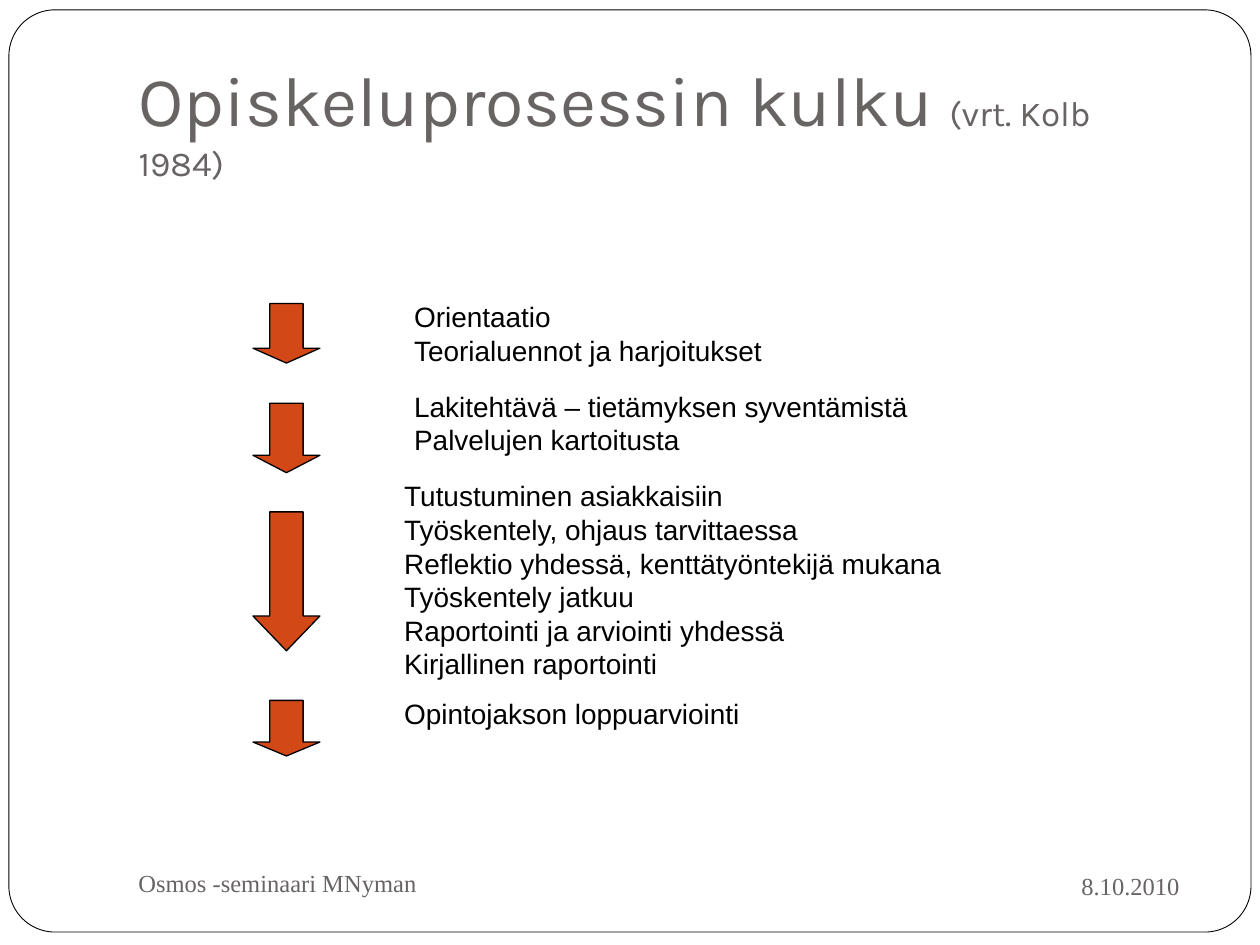
from pptx import Presentation
from pptx.dml.color import RGBColor
from pptx.enum.shapes import MSO_SHAPE
from pptx.enum.text import MSO_ANCHOR, MSO_AUTO_SIZE, PP_ALIGN
from pptx.util import Cm, Pt

ROUND, DOWN = MSO_SHAPE.ROUNDED_RECTANGLE, MSO_SHAPE.DOWN_ARROW
TOP, MIDDLE, BOTTOM = MSO_ANCHOR.TOP, MSO_ANCHOR.MIDDLE, MSO_ANCHOR.BOTTOM
LEFT, RIGHT = PP_ALIGN.LEFT, PP_ALIGN.RIGHT
FIXED = MSO_AUTO_SIZE.NONE

COLORS = {"paper": "FFFFFF", "line": "000000", "text": "000000",
          "muted": "696464", "arrow": "D34817"}

# Content: sizes in points, lengths in cm
TITLE = [("Opiskeluprosessin kulku ", 40), ("(vrt. Kolb 1984)", 20)]

# Arrow top, height and head ratio; text left, top, width, height; lines
STEPS = [
    ((6.12, 1.2, 0.25), (8.1, 5.92, 10.21, 1.63),
     ["Orientaatio", "Teorialuennot ja harjoitukset"]),
    ((8.13, 1.4, 0.26), (8.1, 7.72, 13.41, 1.63),
     ["Lakitehtävä – tietämyksen syventämistä", "Palvelujen kartoitusta"]),
    ((10.32, 2.8, 0.52), (7.9, 9.53, 12.8, 4.37),
     ["Tutustuminen asiakkaisiin",
      "Työskentely, ohjaus tarvittaessa",
      "Reflektio yhdessä, kenttätyöntekijä mukana",
      "Työskentely jatkuu",
      "Raportointi ja arviointi yhdessä",
      "Kirjallinen raportointi"]),
    ((14.12, 1.12, 0.25), (7.9, 13.92, 7.42, 0.94),
     ["Opintojakson loppuarviointi"]),
]
ARROW_X, ARROW_W = 5.1, 1.35

FOOTERS = [
    ("8.10.2010", (17.15, 17.2, 6.88, 1.32), RIGHT),
    ("Osmos -seminaari MNyman", (2.54, 17.15, 11, 1.27), LEFT),
]


def rgb(name):
    return RGBColor.from_string(COLORS[name])


def add_run(para, text, size, font, color):
    run = para.add_run()
    run.text = text
    run.font.size = Pt(size)
    run.font.name = font
    run.font.color.rgb = rgb(color)


def add_form(slide, kind, box, ratios, fill, width):
    form = slide.shapes.add_shape(kind, *map(Cm, box))
    form.shadow.inherit = False
    for i, ratio in enumerate(ratios):
        form.adjustments[i] = ratio
    form.fill.solid()
    form.fill.fore_color.rgb = rgb(fill)
    form.line.color.rgb = rgb("line")
    form.line.width = Pt(width)
    return form


def add_text(slide, box, lines, size, font, color, align=LEFT, anchor=TOP):
    frame = slide.shapes.add_textbox(*map(Cm, box)).text_frame
    frame.word_wrap = True
    frame.vertical_anchor = anchor
    for i, line in enumerate(lines):
        para = frame.add_paragraph() if i else frame.paragraphs[0]
        para.alignment = align
        add_run(para, line, size, font, color)


def main():
    prs = Presentation()
    prs.slide_width, prs.slide_height = Cm(25.4), Cm(19.05)
    slide = prs.slides.add_slide(prs.slide_layouts[5])

    # Title
    title = slide.shapes.title
    title.left, title.top = Cm(2.54), Cm(0.76)
    title.width, title.height = Cm(21.59), Cm(3.18)
    frame = title.text_frame
    frame.auto_size = FIXED
    frame.word_wrap = True
    frame.vertical_anchor = BOTTOM
    frame.margin_bottom = Cm(0.25)
    para = frame.paragraphs[0]
    para.alignment = LEFT
    for text, size in TITLE:
        add_run(para, text, size, "Karla", "muted")

    # Page border, behind the title
    border = add_form(slide, ROUND, (0.18, 0.2, 25.04, 18.59), [0.05],
                      "paper", 0.5)
    title.element.addprevious(border.element)

    # Process steps
    for (top, height, head), box, lines in STEPS:
        add_form(slide, DOWN, (ARROW_X, top, ARROW_W, height), [0.5, head],
                 "arrow", 0.75)
        add_text(slide, box, lines, 16, "Arial", "text")

    # Date and footer
    for text, box, align in FOOTERS:
        add_text(slide, box, [text], 14, "Times New Roman", "muted",
                 align, MIDDLE)

    prs.save("out.pptx")


if __name__ == "__main__":
    main()
